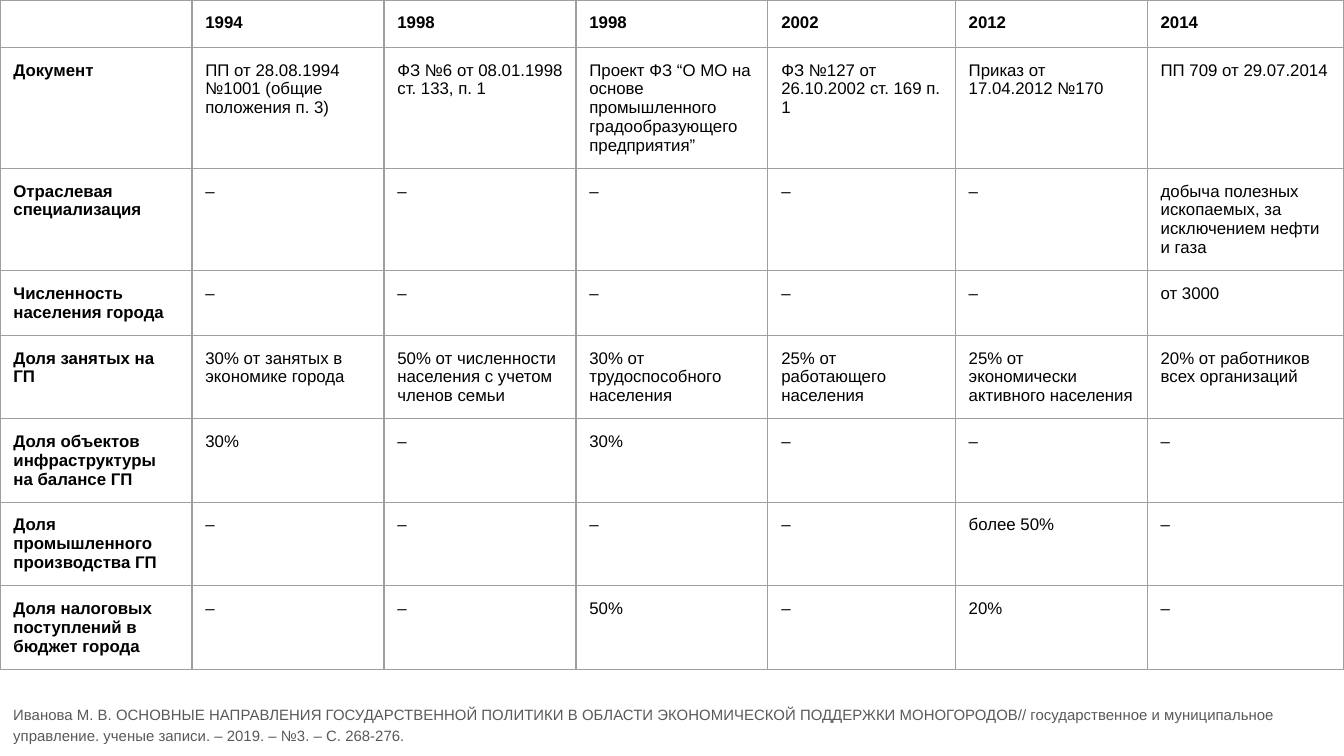
import pptx
import pptx.dml.color
import pptx.enum.text
import pptx.oxml
import pptx.oxml.ns
import pptx.util
from lxml import etree

Pt = pptx.util.Pt
BLACK = pptx.dml.color.RGBColor(0x00, 0x00, 0x00)
GRAY = pptx.dml.color.RGBColor(0x59, 0x59, 0x59)
BORDER = pptx.dml.color.RGBColor(0x9E, 0x9E, 0x9E)

COLUMN_WIDTHS = [102.86, 102.86, 102.86, 102.86, 100.4, 102.86, 105.3]
ROW_HEIGHTS = [23.04, 64.8, 49.68, 31.68, 44.64, 44.64, 41.76, 38.16]
CRITERIA = [
    ["", "1994", "1998", "1998", "2002", "2012", "2014"],
    ["Документ", "ПП от 28.08.1994 №1001 (общие положения п. 3)",
     "ФЗ №6 от 08.01.1998 ст. 133, п. 1",
     "Проект ФЗ “О МО на основе промышленного градообразующего предприятия”",
     "ФЗ №127 от 26.10.2002 ст. 169 п. 1", "Приказ от 17.04.2012 №170",
     "ПП 709 от 29.07.2014"],
    ["Отраслевая специализация", "–", "–", "–", "–", "–",
     "добыча полезных ископаемых, за исключением нефти и газа"],
    ["Численность населения города", "–", "–", "–", "–", "–", "от 3000"],
    ["Доля занятых на ГП", "30% от занятых в экономике города",
     "50% от численности населения с учетом членов семьи",
     "30% от трудоспособного населения", "25% от работающего населения",
     "25% от экономически активного населения",
     "20% от работников всех организаций"],
    ["Доля объектов инфраструктуры на балансе ГП",
     "30%", "–", "30%", "–", "–", "–"],
    ["Доля промышленного производства ГП",
     "–", "–", "–", "–", "более 50%", "–"],
    ["Доля налоговых поступлений в бюджет города",
     "–", "–", "50%", "–", "20%", "–"],
]
CITATION = (
    "Иванова М. В. ОСНОВНЫЕ НАПРАВЛЕНИЯ ГОСУДАРСТВЕННОЙ ПОЛИТИКИ В ОБЛАСТИ "
    "ЭКОНОМИЧЕСКОЙ ПОДДЕРЖКИ МОНОГОРОДОВ// государственное и муниципальное "
    "управление. ученые записи. – 2019. – №3. – С. 268-276."
)


class SlideBuilder:
    font_name = "Arial"
    inset = Pt(7.2)
    border_width = Pt(0.75)

    def __init__(self, slide):
        self.slide = slide

    def add_run(self, paragraph, text, size, color, bold=False):
        run = paragraph.add_run()
        run.text = text
        run.font.name = self.font_name
        run.font.size = Pt(size)
        run.font.bold = bold
        run.font.color.rgb = color

    def set_margins(self, target):
        """Apply the common inset to a cell or a text frame."""
        target.margin_left = target.margin_right = self.inset
        target.margin_top = target.margin_bottom = self.inset

    def add_borders(self, cell):
        properties = cell._tc.get_or_add_tcPr()
        qn = pptx.oxml.ns.qn
        # Border lines must come before the fill in the cell properties.
        for index, side in enumerate(("a:lnL", "a:lnR", "a:lnT", "a:lnB")):
            line = etree.Element(qn(side), w=str(int(self.border_width)))
            fill = etree.SubElement(line, qn("a:solidFill"))
            etree.SubElement(fill, qn("a:srgbClr"), val=str(BORDER))
            properties.insert(index, line)

    def add_table(self, left, top, column_widths, row_heights, rows, size):
        """Add a bordered table with a bold first row and first column."""
        table = self.slide.shapes.add_table(
            len(rows), len(column_widths), Pt(left), Pt(top),
            Pt(sum(column_widths)), Pt(sum(row_heights))).table
        table.first_row = table.horz_banding = False
        for column, width in zip(table.columns, column_widths):
            column.width = Pt(width)
        for row, height in zip(table.rows, row_heights):
            row.height = Pt(height)
        for row_index, texts in enumerate(rows):
            for column_index, text in enumerate(texts):
                cell = table.cell(row_index, column_index)
                self.set_margins(cell)
                cell.fill.background()
                self.add_borders(cell)
                paragraph = cell.text_frame.paragraphs[0]
                if text:
                    bold = row_index == 0 or column_index == 0
                    self.add_run(paragraph, text, size, BLACK, bold)
                else:
                    # An empty cell needs its own size to keep the row low.
                    end = paragraph._p.get_or_add_endParaRPr()
                    end.set("sz", str(size * 100))

    def add_text(self, left, top, width, height, text, size, color):
        box = self.slide.shapes.add_textbox(
            Pt(left), Pt(top), Pt(width), Pt(height))
        frame = box.text_frame
        frame.word_wrap = True
        frame.auto_size = pptx.enum.text.MSO_AUTO_SIZE.SHAPE_TO_FIT_TEXT
        self.set_margins(frame)
        paragraph = frame.paragraphs[0]
        paragraph.line_spacing = 1.15
        paragraph.space_before = paragraph.space_after = Pt(12)
        self.add_run(paragraph, text, size, color)


def main():
    presentation = pptx.Presentation()
    presentation.slide_width = Pt(720)
    presentation.slide_height = Pt(405)
    blank_layout = presentation.slide_layouts[6]
    builder = SlideBuilder(presentation.slides.add_slide(blank_layout))
    builder.add_table(0, 0, COLUMN_WIDTHS, ROW_HEIGHTS, CRITERIA, size=9)
    builder.add_text(0, 369.5, 720, 35.5, CITATION, size=8, color=GRAY)
    presentation.save("out.pptx")


if __name__ == "__main__":
    main()
